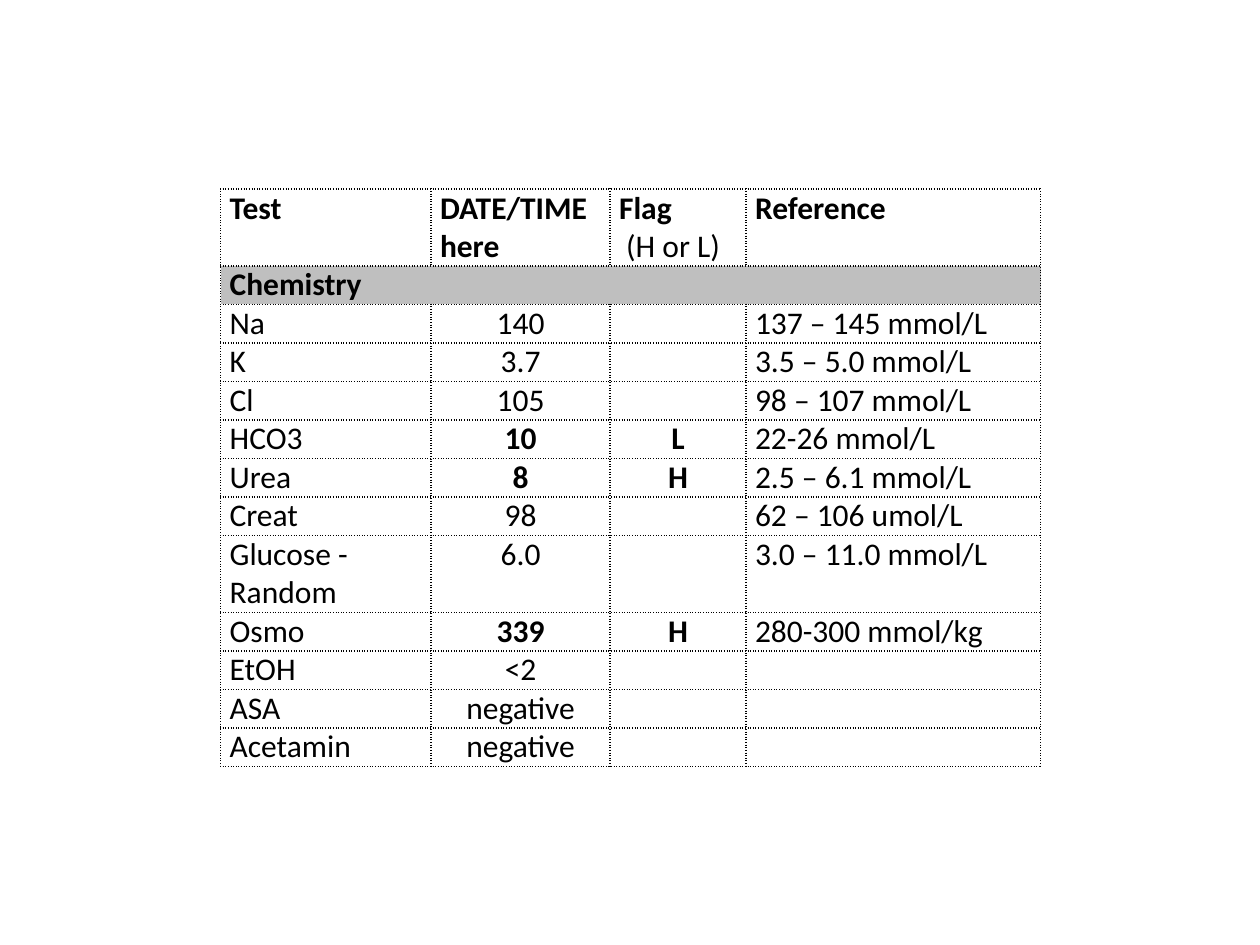
from lxml.etree import SubElement
from pptx import Presentation
from pptx.dml.color import RGBColor
from pptx.enum.text import PP_ALIGN
from pptx.oxml.ns import qn
from pptx.util import Cm, Pt

HEADINGS = ["Test", "DATE/TIME here", "Flag\n (H or L)", "Reference"]
SECTION = "Chemistry"
RESULTS = [
    ("Na", "140", "", "137 – 145 mmol/L"),
    ("K", "3.7", "", "3.5 – 5.0 mmol/L"),
    ("Cl", "105", "", "98 – 107 mmol/L"),
    ("HCO3", "10", "L", "22-26 mmol/L"),
    ("Urea", "8", "H", "2.5 – 6.1 mmol/L"),
    ("Creat", "98", "", "62 – 106 umol/L"),
    ("Glucose - Random", "6.0", "", "3.0 – 11.0 mmol/L"),
    ("Osmo", "339", "H", "280-300 mmol/kg"),
    ("EtOH", "<2", "", ""),
    ("ASA", "negative", "", ""),
    ("Acetamin", "negative", "", ""),
]
COLUMN_SHARES = [4.24, 3.61, 2.74, 5.94]
LINE_HEIGHT = 0.77
TWO_LINE_ROWS = {0, 8}


def color(value):
    return RGBColor.from_string(value)


def add_borders(cell):
    properties = cell._tc.get_or_add_tcPr()
    for side in ("lnL", "lnR", "lnT", "lnB"):
        border = SubElement(properties, qn(f"a:{side}"), w=str(Pt(1)))
        line_fill = SubElement(border, qn("a:solidFill"))
        SubElement(line_fill, qn("a:srgbClr"), val="000000")
        SubElement(border, qn("a:prstDash"), val="dot")


def write_cell(cell, text, fill=None, bold=False, centered=False):
    cell.margin_left = cell.margin_right = Cm(0.18)
    cell.margin_top = cell.margin_bottom = 0
    add_borders(cell)
    if fill:
        cell.fill.solid()
        cell.fill.fore_color.rgb = color(fill)
    else:
        cell.fill.background()
    cell.text = text
    for number, paragraph in enumerate(cell.text_frame.paragraphs):
        paragraph.alignment = PP_ALIGN.CENTER if centered else PP_ALIGN.LEFT
        paragraph.font.name = "Calibri"
        paragraph.font.size = Pt(18)
        paragraph.font.bold = bold and number == 0
        paragraph.font.color.rgb = color("000000")


def add_lab_results(slide, left, top, width):
    row_count = len(RESULTS) + 2
    height = LINE_HEIGHT * (row_count + len(TWO_LINE_ROWS))
    table = slide.shapes.add_table(
        row_count, len(HEADINGS), Cm(left), Cm(top), Cm(width), Cm(height)
    ).table
    table.first_row = table.horz_banding = False
    for column, share in zip(table.columns, COLUMN_SHARES):
        column.width = Cm(width * share / sum(COLUMN_SHARES))
    for number, row in enumerate(table.rows):
        row.height = Cm(LINE_HEIGHT * (2 if number in TWO_LINE_ROWS else 1))

    for column, heading in enumerate(HEADINGS):
        write_cell(table.cell(0, column), heading, "FFFFFF", bold=True)
        write_cell(table.cell(1, column), "" if column else SECTION, "BFBFBF", bold=True)
    table.cell(1, 0).merge(table.cell(1, len(HEADINGS) - 1))

    for row, result in enumerate(RESULTS, start=2):
        flagged = bool(result[2])
        for column, text in enumerate(result):
            measured = column in (1, 2)
            write_cell(table.cell(row, column), text,
                       bold=flagged and measured, centered=measured)


def main():
    presentation = Presentation()
    presentation.slide_width = Cm(25.4)
    presentation.slide_height = Cm(19.05)
    slide = presentation.slides.add_slide(presentation.slide_layouts[6])
    add_lab_results(slide, left=4.45, top=3.81, width=16.53)
    presentation.save("out.pptx")


if __name__ == "__main__":
    main()
